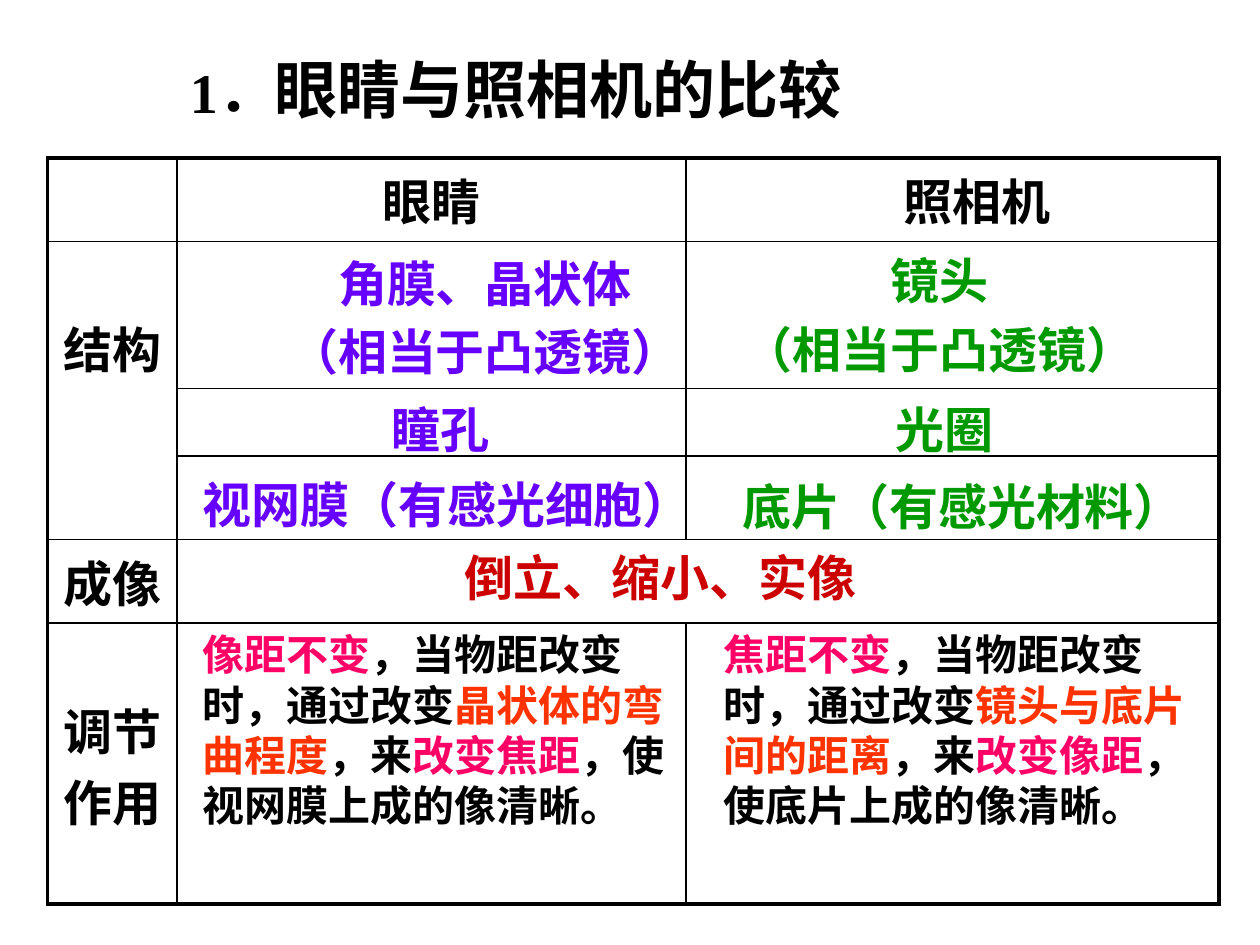
from lxml.etree import SubElement
from pptx import Presentation
from pptx.dml.color import RGBColor
from pptx.enum.text import MSO_ANCHOR, MSO_AUTO_SIZE, PP_ALIGN
from pptx.oxml import parse_xml
from pptx.oxml.ns import nsdecls, qn
from pptx.util import Pt

COLORS = {
    "black": "000000", "white": "FFFFFF", "violet": "6600FF", "green": "009900",
    "crimson": "CC0000", "pink": "FF0066", "orange": "FF3300",
}
SERIF = "Times New Roman"
LEFT, CENTER = PP_ALIGN.LEFT, PP_ALIGN.CENTER

# Table: place, sizes, text by (row, column), merged areas
TABLE_BOX = (27, 90.2, 669.6, 416.9)
COLUMN_WIDTHS = [74.2, 290.9, 304.5]
ROW_HEIGHTS = [43.2, 84.2, 38.5, 47.7, 38.2, 160.6]
CELL_TEXTS = {
    (0, 1): "眼睛", (0, 2): "　照相机",
    (1, 0): "结构", (4, 0): "成像", (5, 0): "调节作用",
}
LOWERED_CELLS = [(1, 0), (5, 0)]
LOWERED_MARGIN = 40.5
MERGES = [((1, 0), (3, 0)), ((4, 1), (4, 2))]
OUTER_LINE, INNER_LINE = 2.25, 1

# Text over the table: box, alignment, size, paragraphs of (text, colour) runs,
# frame formats that differ from the usual ones
TEXTS = [
    ((141.1, 141.1, 293.8, 81.4), CENTER, 28,
     [[("角膜、晶状体", "violet")], [("（相当于凸透镜）", "violet")]],
     {"margin_right": Pt(93.8)}),
    ((216.7, 224.6, 95.8, 41), LEFT, 28, [[("瞳孔", "violet")]], {}),
    ((108.7, 267.8, 347.8, 41), LEFT, 28, [[("视网膜（有感光细胞）", "violet")]], {}),
    ((258.5, 309.6, 285.8, 41), LEFT, 28, [[("倒立、缩小、实像", "crimson")]], {}),
    ((388.8, 139.7, 295.9, 81.4), CENTER, 28,
     [[("镜头", "green")], [("（相当于凸透镜）", "green")]], {}),
    ((504.7, 224.6, 70.6, 41), LEFT, 28, [[("光圈", "green")]], {}),
    ((416.2, 268.6, 267.8, 41), CENTER, 28,
     [[("底片（有感光材料）", "green")]], {"word_wrap": False}),
    ((108.7, 355.7, 290.2, 123.8), LEFT, 24,
     [[("像距不变", "pink"), ("，当物距改变时，通过改变", "black"),
       ("晶状体的弯曲程度", "orange"), ("，来", "black"),
       ("改变焦距", "pink"), ("，使视网膜上成的像清晰。", "black")]], {}),
    ((406.1, 355.7, 293.8, 123.8), LEFT, 24,
     [[("焦距不变", "pink"), ("，当物距改变时，通过改变", "black"),
       ("镜头与底片间的距离", "orange"), ("，来", "black"),
       ("改变像距", "pink"), ("，使底片上成的像清晰。", "black")]], {}),
]
# The lens text is centred a little left of the middle of its box
TEXTS[0] = ((141.1 - 0, *TEXTS[0][0][1:]), *TEXTS[0][1:4], {"margin_right": Pt(28.9)})
TITLE_BOX = (101.5, 21.7, 478.1, 57.6)
TITLE_RUNS = [("1．", 32), ("眼睛与照相机的比较", 36)]


def add_run(paragraph, text, size, color="black", font_name=SERIF):
    run = paragraph.add_run()
    run.text = text
    for name, value in {"size": Pt(size), "bold": True, "name": font_name}.items():
        setattr(run.font, name, value)
    run.font.color.rgb = RGBColor.from_string(COLORS[color])


def add_text_frame(slide, box, formats):
    frame = slide.shapes.add_textbox(*map(Pt, box)).text_frame
    for name, value in formats.items():
        setattr(frame, name, value)
    return frame


def format_cell(cell, widths):
    cell.fill.solid()
    cell.fill.fore_color.rgb = RGBColor.from_string(COLORS["white"])
    properties = cell._tc.get_or_add_tcPr()
    fill_color = properties.find(qn("a:solidFill"))[0]
    SubElement(fill_color, qn("a:alpha"), val="50000")
    for index, (side, width) in enumerate(widths.items()):
        properties.insert(index, parse_xml(
            f'<a:ln{side} {nsdecls("a")} w="{int(Pt(width))}"><a:solidFill>'
            f'<a:srgbClr val="{COLORS["black"]}"/></a:solidFill></a:ln{side}>'))


def add_comparison_table(slide):
    rows, columns = len(ROW_HEIGHTS), len(COLUMN_WIDTHS)
    table = slide.shapes.add_table(rows, columns, *map(Pt, TABLE_BOX)).table
    table.first_row = table.horz_banding = False
    for column, width in zip(table.columns, COLUMN_WIDTHS):
        column.width = Pt(width)
    for row, height in zip(table.rows, ROW_HEIGHTS):
        row.height = Pt(height)

    # Heavy frame outside, thin lines inside; a merged cell ends at its last column
    last_columns = {first: last[1] for first, last in MERGES}
    for row in range(rows):
        for column in range(columns):
            last_column = last_columns.get((row, column), column)
            edges = {"L": column == 0, "R": last_column == columns - 1,
                     "T": row == 0, "B": row == rows - 1}
            format_cell(table.cell(row, column), {
                side: OUTER_LINE if outer else INNER_LINE
                for side, outer in edges.items()})
    for first, last in MERGES:
        table.cell(*first).merge(table.cell(*last))

    # Headings and row labels
    for position, text in CELL_TEXTS.items():
        cell = table.cell(*position)
        if position in LOWERED_CELLS:
            cell.margin_top = Pt(LOWERED_MARGIN)
        paragraph = cell.text_frame.paragraphs[0]
        paragraph.alignment = CENTER
        add_run(paragraph, text, 28, font_name="Arial")


def main():
    presentation = Presentation()
    presentation.slide_width, presentation.slide_height = Pt(720), Pt(540)
    slide = presentation.slides.add_slide(presentation.slide_layouts[6])

    add_comparison_table(slide)

    # Answers over the table, punctuation kept inside the lines
    for box, alignment, size, paragraphs, formats in TEXTS:
        frame = add_text_frame(slide, box, {
            "word_wrap": True, "auto_size": MSO_AUTO_SIZE.SHAPE_TO_FIT_TEXT, **formats})
        for index, runs in enumerate(paragraphs):
            paragraph = frame.add_paragraph() if index else frame.paragraphs[0]
            paragraph.alignment = alignment
            paragraph._p.get_or_add_pPr().set("hangingPunct", "0")
            if index:
                paragraph.space_before = Pt(0.2 * size)
            for text, color in runs:
                add_run(paragraph, text, size, color)

    # Title
    frame = add_text_frame(slide, TITLE_BOX, {
        "word_wrap": True, "vertical_anchor": MSO_ANCHOR.MIDDLE})
    for text, size in TITLE_RUNS:
        add_run(frame.paragraphs[0], text, size)

    presentation.save("out.pptx")


if __name__ == "__main__":
    main()
